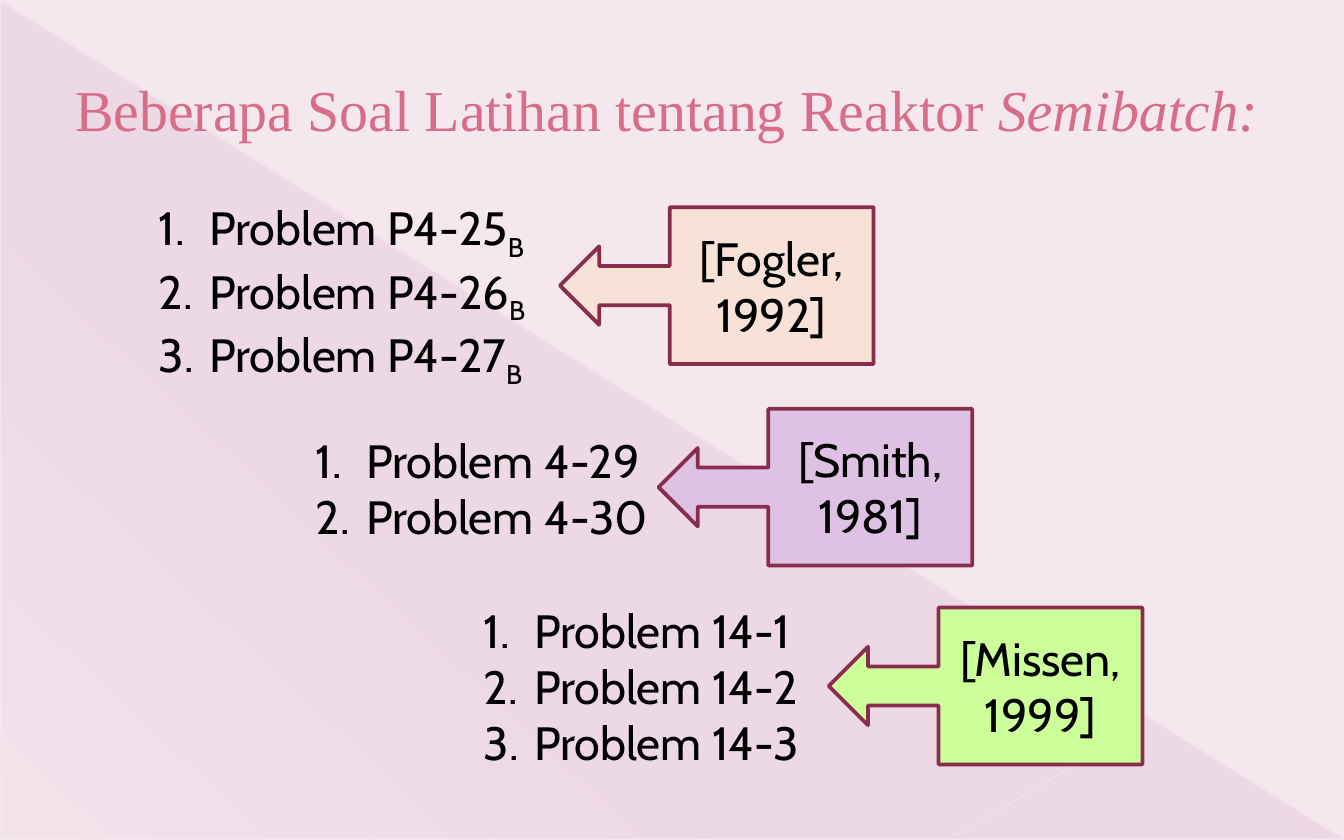
"""Build a slide of semibatch reactor exercises, each list paired with its source."""
from dataclasses import dataclass

import pptx
import pptx.dml.color
import pptx.enum.shapes
import pptx.enum.text
import pptx.oxml
import pptx.oxml.ns
import pptx.shapes.autoshape
import pptx.slide
import pptx.text.text
import pptx.util

Pt = pptx.util.Pt
RGBColor = pptx.dml.color.RGBColor
Shape = pptx.enum.shapes.MSO_SHAPE
Align = pptx.enum.text.PP_ALIGN
Anchor = pptx.enum.text.MSO_ANCHOR
qn = pptx.oxml.ns.qn

BACKGROUND = RGBColor(0xF4, 0xE7, 0xED)
SHADE = RGBColor(0xB1, 0x3F, 0x9A)
DIAGONAL = RGBColor(0xFC, 0xEF, 0xF5)
CORNER = RGBColor(0xFD, 0xF0, 0xF6)
TITLE = RGBColor(0xD8, 0x6D, 0x89)
BORDER = RGBColor(0x88, 0x2D, 0x4D)
BLACK = RGBColor(0, 0, 0)
PEACH = RGBColor(0xF8, 0xE2, 0xD7)
LILAC = RGBColor(0xDE, 0xC2, 0xE4)
LIME = RGBColor(0xCC, 0xFF, 0x99)
BODY_FONT = "Cabin"
BODY_SIZE = 25
INDENT = 27


@dataclass(frozen=True)
class ExerciseGroup:
    """A numbered problem list and the callout naming its source."""

    problems: tuple[str, ...]
    list_position: tuple[float, float]
    source: str
    callout_position: tuple[float, float]
    color: RGBColor
    subscript: str = ""


@dataclass(frozen=True)
class Highlight:
    """A faint straight line across the background."""

    start: tuple[float, float]
    end: tuple[float, float]
    color: RGBColor
    width: float
    opacity: int


GROUPS = (
    ExerciseGroup(("Problem P4-25", "Problem P4-26", "Problem P4-27"), (78, 103),
                  "[Fogler, 1992]", (300, 111), PEACH, "B"),
    ExerciseGroup(("Problem 4-29", "Problem 4-30"), (162, 228),
                  "[Smith, 1981]", (352.8, 219), LILAC),
    ExerciseGroup(("Problem 14-1", "Problem 14-2", "Problem 14-3"), (252, 319),
                  "[Missen, 1999]", (444, 325.5), LIME),
)
HIGHLIGHTS = (
    Highlight((0, 0.7), (719.3, 449.3), DIAGONAL, 0.39, 35),
    Highlight((720, 324.7), (509, 449.3), CORNER, 0.47, 45),
)


def add_run(paragraph: pptx.text.text._Paragraph, text: str, size: float = BODY_SIZE,
            font: str = BODY_FONT, color: RGBColor = BLACK) -> pptx.text.text._Run:
    """Append one formatted run."""
    run = paragraph.add_run()
    run.text = text
    run.font.size = Pt(size)
    run.font.name = font
    run.font.color.rgb = color
    return run


def add_shade(slide: pptx.slide.Slide) -> None:
    """Draw the translucent triangle of the background."""
    triangle = slide.shapes.add_shape(Shape.RIGHT_TRIANGLE, Pt(0.7), Pt(0.7), Pt(718.6), Pt(448.6))
    triangle.shadow.inherit = False
    triangle.line.fill.background()
    stops = "".join(
        f'<a:gs pos="{position * 1000}"><a:srgbClr val="{SHADE}">'
        f'<a:alpha val="{opacity * 1000}"/></a:srgbClr></a:gs>'
        for position, opacity in ((0, 10), (70, 8), (100, 1)))
    gradient = pptx.oxml.parse_xml(
        f'<a:gradFill {pptx.oxml.ns.nsdecls("a")} rotWithShape="1"><a:gsLst>{stops}</a:gsLst>'
        f'<a:lin ang="{133 * 60000}" scaled="0"/></a:gradFill>')
    triangle._element.spPr.find(qn("a:prstGeom")).addnext(gradient)


def add_highlight(slide: pptx.slide.Slide, highlight: Highlight) -> None:
    """Draw one translucent background line."""
    connector = slide.shapes.add_connector(
        pptx.enum.shapes.MSO_CONNECTOR.STRAIGHT,
        *(Pt(value) for value in highlight.start + highlight.end))
    connector.line.color.rgb = highlight.color
    connector.line.width = Pt(highlight.width)
    properties = connector._element.spPr
    color = properties.find(".//" + qn("a:srgbClr"))
    color.makeelement(qn("a:alpha"))
    color.append(color.makeelement(qn("a:alpha"), {"val": str(highlight.opacity * 1000)}))
    properties.append(properties.makeelement(qn("a:effectLst")))


def add_title(slide: pptx.slide.Slide) -> None:
    """Write the slide heading."""
    frame = slide.shapes.add_textbox(Pt(24), Pt(29.5), Pt(666), Pt(57.6)).text_frame
    frame.word_wrap = True
    frame.vertical_anchor = Anchor.MIDDLE
    paragraph = frame.paragraphs[0]
    paragraph.alignment = Align.CENTER
    add_run(paragraph, "Beberapa Soal Latihan tentang Reaktor ", 31, "Times New Roman", TITLE)
    add_run(paragraph, "Semibatch:", 31, "Times New Roman", TITLE).font.italic = True


def add_problem_list(slide: pptx.slide.Slide, group: ExerciseGroup) -> None:
    """Write the numbered problems of one group."""
    left, top = group.list_position
    height = 7.2 + 30.24 * len(group.problems)
    frame = slide.shapes.add_textbox(Pt(left), Pt(top), Pt(222), Pt(height)).text_frame
    frame.word_wrap = True
    frame.auto_size = pptx.enum.text.MSO_AUTO_SIZE.SHAPE_TO_FIT_TEXT
    for index, problem in enumerate(group.problems):
        paragraph = frame.add_paragraph() if index else frame.paragraphs[0]
        properties = paragraph._p.get_or_add_pPr()
        properties.set("marL", str(Pt(INDENT)))
        properties.set("indent", str(-Pt(INDENT)))
        properties.append(properties.makeelement(qn("a:buFont"), {"typeface": "+mj-lt"}))
        properties.append(properties.makeelement(qn("a:buAutoNum"), {"type": "arabicPeriod"}))
        add_run(paragraph, problem)
        if group.subscript:
            subscript = add_run(paragraph, group.subscript)
            subscript._r.get_or_add_rPr().set("baseline", "-25000")


def add_source_callout(slide: pptx.slide.Slide, group: ExerciseGroup) -> None:
    """Draw the arrow callout naming the source of one group."""
    left, top = group.callout_position
    callout = slide.shapes.add_shape(Shape.LEFT_ARROW_CALLOUT, Pt(left), Pt(top), Pt(168), Pt(84))
    callout.shadow.inherit = False
    callout.fill.solid()
    callout.fill.fore_color.rgb = group.color
    callout.line.color.rgb = BORDER
    callout.line.width = Pt(2)
    frame = callout.text_frame
    frame.word_wrap = True
    frame.vertical_anchor = Anchor.MIDDLE
    frame.paragraphs[0].alignment = Align.CENTER
    add_run(frame.paragraphs[0], group.source)


def main() -> None:
    """Assemble and save the presentation."""
    presentation = pptx.Presentation()
    presentation.slide_width, presentation.slide_height = Pt(720), Pt(450)
    slide = presentation.slides.add_slide(presentation.slide_layouts[6])
    slide.background.fill.solid()
    slide.background.fill.fore_color.rgb = BACKGROUND
    add_shade(slide)
    for highlight in HIGHLIGHTS:
        add_highlight(slide, highlight)
    add_title(slide)
    for group in GROUPS:
        add_problem_list(slide, group)
        add_source_callout(slide, group)
    presentation.save("out.pptx")


if __name__ == "__main__":
    main()
